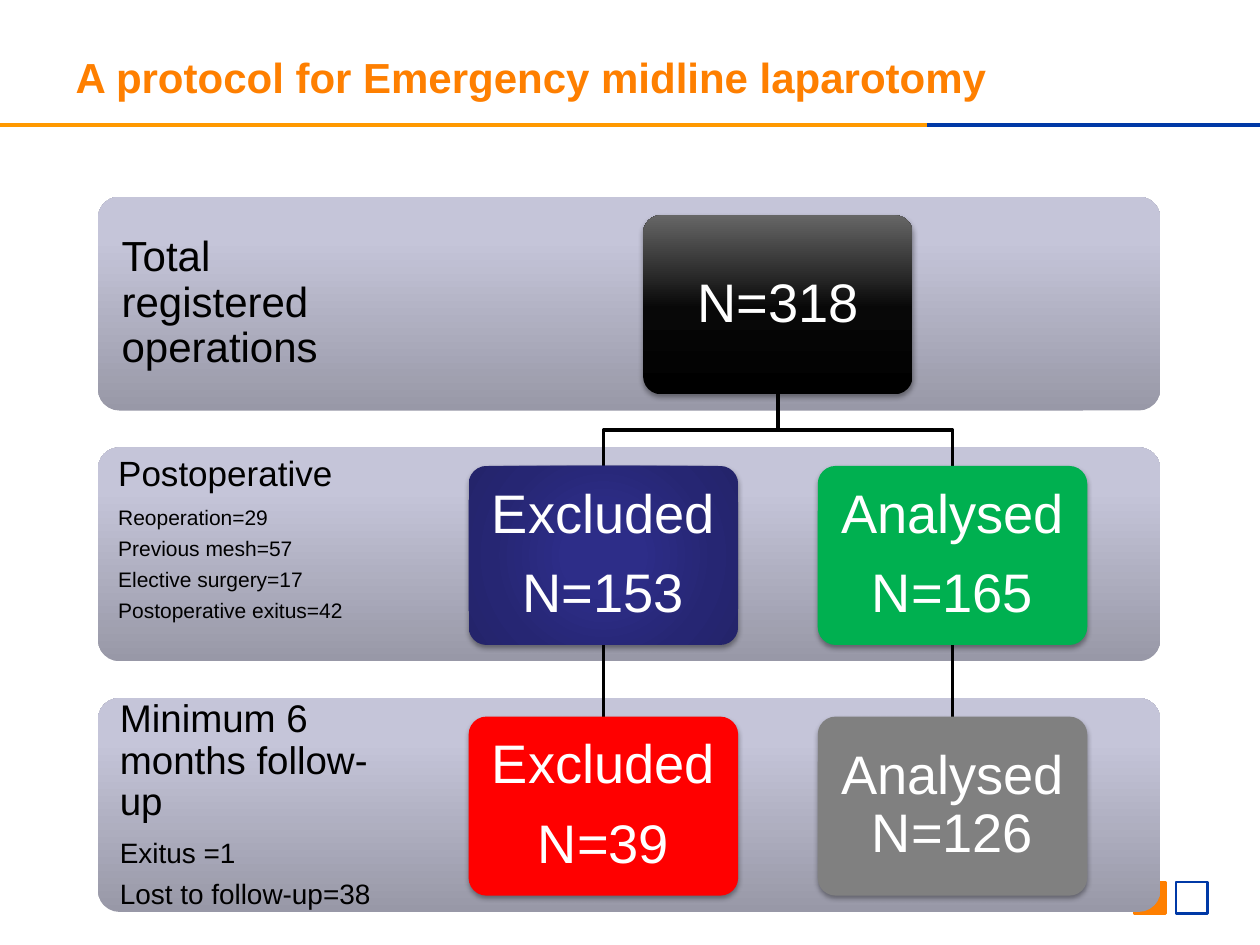
from dataclasses import dataclass

import lxml.etree
import pptx
import pptx.dml.color
import pptx.enum.shapes
import pptx.enum.text
import pptx.oxml
import pptx.oxml.ns
import pptx.util

Pt = pptx.util.Pt
SHAPE = pptx.enum.shapes.MSO_SHAPE
CONNECTOR = pptx.enum.shapes.MSO_CONNECTOR
ALIGN = pptx.enum.text.PP_ALIGN
MIDDLE = pptx.enum.text.MSO_ANCHOR.MIDDLE

COLORS = {
    "orange": "FE7F00", "rule": "FF9900", "blue": "0039A6",
    "black": "000000", "white": "FFFFFF",
    "red": "FF0000", "green": "00B050", "grey": "808080",
}
# Gradient stops: (position in percent, colour)
BAND_STOPS = [(0, "9898A7"), (80, "C5C5D9"), (100, "C6C6DA")]
BLACK_STOPS = [(0, "000000"), (48, "080808"), (100, "666666")]
NAVY_STOPS = [(0, "2D2D88"), (23, "2D2D88"), (69, "262673"), (97, "24246B")]
UPWARD = '<a:lin ang="16200000" scaled="0"/>'
RADIAL = ('<a:path path="circle"><a:fillToRect l="50000" t="50000" '
          'r="50000" b="50000"/></a:path>')

# Grid of the chart
ROW_PITCH = 143.25
BAND_LEFT, BAND_TOP, BAND_WIDTH, BAND_HEIGHT = 56, 112.4, 607, 122.2
LABEL_WIDTH = 182
BOX_TOP, BOX_WIDTH, BOX_HEIGHT = 123, 154, 102.3
LEFT, CENTER, RIGHT = 344.8, 444.5, 544.3


@dataclass
class Band:
    lines: list[tuple[str, float]]  # text and size
    inset: float
    extra_bottom: float = 0


@dataclass
class Box:
    lines: list[str]
    center: float
    row: int
    color: str = ""
    stops: list | None = None
    direction: str = UPWARD


BANDS = [
    Band([("Total registered operations", 24)], 13.5),
    Band([("Postoperative", 20), ("Reoperation=29", 12), ("Previous mesh=57", 12),
          ("Elective surgery=17", 12), ("Postoperative exitus=42", 12)], 11.5, 17),
    Band([("Minimum 6 months follow-up", 22), ("Exitus =1", 16),
          ("Lost to follow-up=38", 16)], 12.5),
]
BOXES = [
    Box(["N=318"], CENTER, 0, stops=BLACK_STOPS),
    Box(["Excluded", "N=153"], LEFT, 1, stops=NAVY_STOPS, direction=RADIAL),
    Box(["Excluded", "N=39"], LEFT, 2, "red"),
    Box(["Analysed", "N=165"], RIGHT, 1, "green"),
    Box(["Analysed N=126"], RIGHT, 2, "grey"),
]


def rgb(name: str) -> pptx.dml.color.RGBColor:
    return pptx.dml.color.RGBColor.from_string(COLORS[name])


def drawing_xml(body: str):
    """Parse a drawing element whose root is the first tag of body."""
    tag, rest = body.split(">", 1)
    return pptx.oxml.parse_xml(f"{tag} {pptx.oxml.ns.nsdecls('a')}>{rest}")


def set_gradient(shape, stops: list, direction: str) -> None:
    shape.fill.background()
    marks = "".join(f'<a:gs pos="{position * 1000}"><a:srgbClr val="{color}"/></a:gs>'
                    for position, color in stops)
    gradient = drawing_xml(
        f'<a:gradFill rotWithShape="1"><a:gsLst>{marks}</a:gsLst>{direction}</a:gradFill>')
    properties = shape._element.spPr
    properties.replace(properties.find(pptx.oxml.ns.qn("a:noFill")), gradient)


def set_shadow(shape) -> None:
    effects = shape._element.spPr.find(pptx.oxml.ns.qn("a:effectLst"))
    effects.append(drawing_xml(
        '<a:outerShdw blurRad="39400" dist="21600" dir="5400000" rotWithShape="0">'
        '<a:srgbClr val="000000"><a:alpha val="37000"/></a:srgbClr></a:outerShdw>'))


def write_text(shape, lines: list[tuple[str, float]], *, color: str, inset: float,
               extra_bottom: float = 0, align=ALIGN.LEFT, bold: bool = False,
               line_spacing: float = 0.9, space_factor: float = 0.39) -> None:
    frame = shape.text_frame
    frame.word_wrap = True
    frame.auto_size = pptx.enum.text.MSO_AUTO_SIZE.NONE
    frame.vertical_anchor = MIDDLE
    frame.margin_left = frame.margin_right = frame.margin_top = Pt(inset)
    frame.margin_bottom = Pt(inset + extra_bottom)
    for index, (text, size) in enumerate(lines):
        paragraph = frame.add_paragraph() if index else frame.paragraphs[0]
        paragraph.alignment = align
        paragraph.line_spacing = line_spacing
        paragraph.space_before = Pt(0)
        paragraph.space_after = Pt(size * space_factor)
        run = paragraph.add_run()
        run.text = text
        run.font.name = "Arial"
        run.font.size = Pt(size)
        run.font.bold = bold
        run.font.color.rgb = rgb(color)


def add_plain_shape(slide, kind, left: float, top: float, width: float, height: float):
    shape = slide.shapes.add_shape(kind, Pt(left), Pt(top), Pt(width), Pt(height))
    shape.shadow.inherit = False
    shape.line.fill.background()
    if kind == SHAPE.ROUNDED_RECTANGLE:
        shape.adjustments[0] = 0.1
    return shape


def add_line(slide, start: tuple, end: tuple, color: str, width: float) -> None:
    line = slide.shapes.add_connector(CONNECTOR.STRAIGHT, *map(Pt, start + end))
    line.line.color.rgb = rgb(color)
    line.line.width = Pt(width)
    lxml.etree.SubElement(line._element.spPr, pptx.oxml.ns.qn("a:effectLst"))


def add_branch(slide, center: float) -> None:
    """Elbow from the top box down to a box of the second row."""
    top, bottom = BOX_TOP + BOX_HEIGHT, BOX_TOP + ROW_PITCH
    middle = (top + bottom) / 2
    corners = [(CENTER, middle), (center, middle), (center, bottom)]
    builder = slide.shapes.build_freeform(Pt(CENTER), Pt(top))
    builder.add_line_segments([(Pt(x), Pt(y)) for x, y in corners], close=False)
    branch = builder.convert_to_shape()
    branch.shadow.inherit = False
    branch.fill.background()
    branch.line.color.rgb = rgb("black")
    branch.line.width = Pt(2)


def add_band(slide, band: Band, row: int) -> None:
    top = BAND_TOP + row * ROW_PITCH
    shape = add_plain_shape(slide, SHAPE.ROUNDED_RECTANGLE,
                            BAND_LEFT, top, BAND_WIDTH, BAND_HEIGHT)
    set_gradient(shape, BAND_STOPS, UPWARD)
    label = slide.shapes.add_textbox(Pt(BAND_LEFT), Pt(top), Pt(LABEL_WIDTH), Pt(BAND_HEIGHT))
    write_text(label, band.lines, color="black", inset=band.inset,
               extra_bottom=band.extra_bottom)


def add_box(slide, box: Box) -> None:
    shape = add_plain_shape(slide, SHAPE.ROUNDED_RECTANGLE, box.center - BOX_WIDTH / 2,
                            BOX_TOP + box.row * ROW_PITCH, BOX_WIDTH, BOX_HEIGHT)
    if box.stops:
        set_gradient(shape, box.stops, box.direction)
    else:
        shape.fill.solid()
        shape.fill.fore_color.rgb = rgb(box.color)
    set_shadow(shape)
    write_text(shape, [(line, 31) for line in box.lines], color="white",
               inset=9.4, align=ALIGN.CENTER)


def main() -> None:
    presentation = pptx.Presentation()
    presentation.slide_width, presentation.slide_height = Pt(720), Pt(540)
    slide = presentation.slides.add_slide(presentation.slide_layouts[5])

    # Title and the rule below it
    title = slide.shapes.title
    title.left, title.top, title.width, title.height = map(Pt, (36, 21.6, 648, 44.6))
    write_text(title, [("A protocol for Emergency midline laparotomy", 24)],
               color="orange", inset=7.2, bold=True, line_spacing=1, space_factor=0)
    add_line(slide, (0, 71.3), (530, 71.3), "rule", 2.25)
    add_line(slide, (530, 71.3), (720, 71.3), "blue", 2)

    # Corner squares
    for left, color, filled in ((648, "orange", True), (672, "blue", False)):
        square = add_plain_shape(slide, SHAPE.RECTANGLE, left, 504, 18, 18)
        square.line.color.rgb = rgb(color)
        square.line.width = Pt(1.5)
        if filled:
            square.fill.solid()
            square.fill.fore_color.rgb = rgb(color)
        else:
            square.fill.background()

    # Stage bands, connecting lines, then boxes
    for row, band in enumerate(BANDS):
        add_band(slide, band, row)
    for center in (LEFT, RIGHT):
        add_branch(slide, center)
        start = BOX_TOP + ROW_PITCH + BOX_HEIGHT
        add_line(slide, (center, start), (center, BOX_TOP + 2 * ROW_PITCH), "black", 2)
    for box in BOXES:
        add_box(slide, box)

    presentation.save("out.pptx")


if __name__ == "__main__":
    main()
